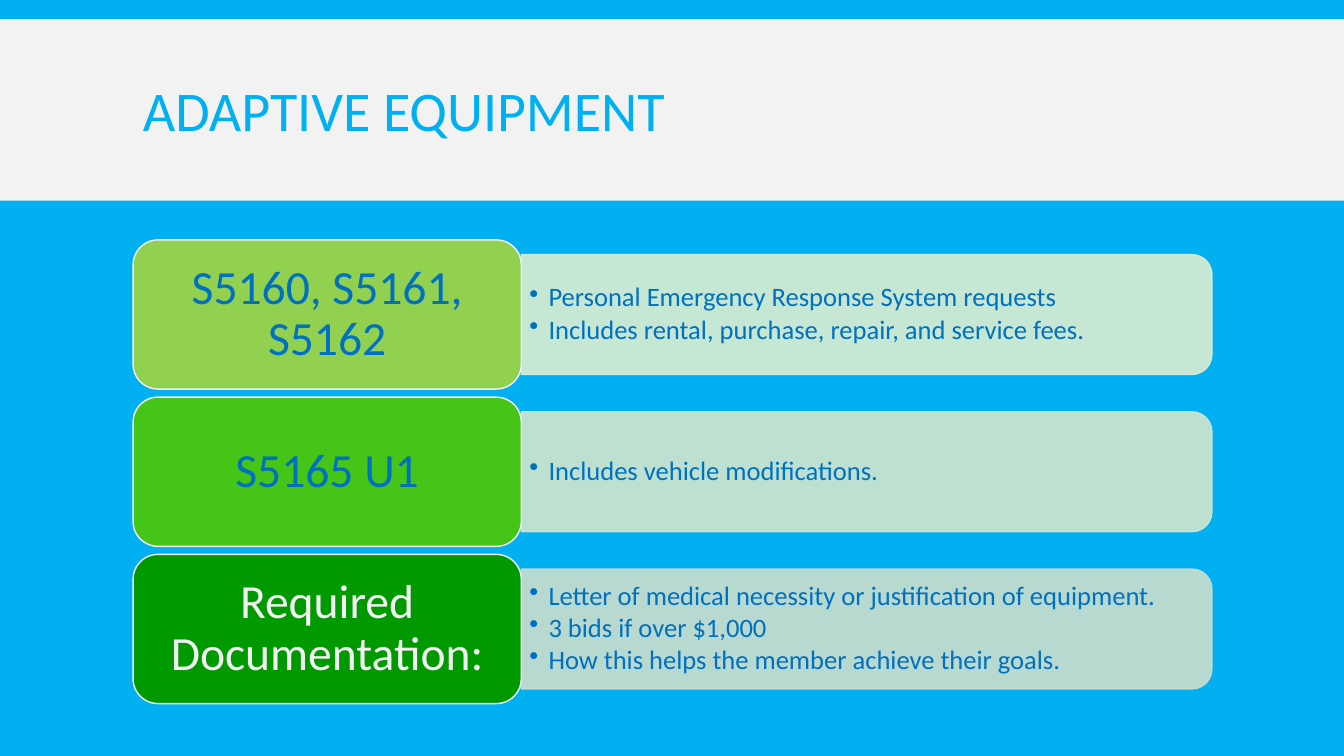
from dataclasses import dataclass

from lxml import etree
from pptx import Presentation
from pptx.dml.color import RGBColor
from pptx.enum.shapes import MSO_SHAPE
from pptx.enum.text import MSO_ANCHOR, PP_ALIGN
from pptx.oxml.ns import qn
from pptx.util import Inches, Pt

RECTANGLE = MSO_SHAPE.RECTANGLE
ROUNDED = MSO_SHAPE.ROUNDED_RECTANGLE
ROUNDED_TOP = MSO_SHAPE.ROUND_2_SAME_RECTANGLE
MIDDLE = MSO_ANCHOR.MIDDLE
LEFT, CENTER = PP_ALIGN.LEFT, PP_ALIGN.CENTER


@dataclass(frozen=True)
class Theme:
    font: str = "Calibri"
    sky: str = "00B0F0"
    pale: str = "F2F2F2"
    blue: str = "0070C0"
    title_size: int = 40
    code_size: int = 34
    detail_size: int = 19
    panel_opacity: int = 90


THEME = Theme()

ROWS = [
    ("S5160, S5161, S5162", "92D050", THEME.blue, "DCEED0",
     ["Personal Emergency Response System requests",
      "Includes rental, purchase, repair, and service fees."]),
    ("S5165 U1", "44C517", THEME.blue, "D2E6CD",
     ["Includes vehicle modifications."]),
    ("Required Documentation:", "009900", THEME.pale, "CCDECC",
     ["Letter of medical necessity or justification of equipment.",
      "3 bids if over $1,000",
      "How this helps the member achieve their goals."]),
]

ROW_LEFT, ROW_TOP, ROW_PITCH = 1.32, 2.38, 1.56
CODE_WIDTH, CODE_HEIGHT = 3.85, 1.48
PANEL_WIDTH, PANEL_HEIGHT = 6.85, 1.19
DETAIL_WIDTH, DETAIL_HEIGHT = 6.79, 1.07


def add_box(slide, kind, left, top, width, height, fill, line=None):
    shape = slide.shapes.add_shape(
        kind, Inches(left), Inches(top), Inches(width), Inches(height))
    shape.shadow.inherit = False
    shape.fill.solid()
    shape.fill.fore_color.rgb = RGBColor.from_string(fill)
    if line:
        shape.line.color.rgb = RGBColor.from_string(line)
        shape.line.width = Pt(1)
    else:
        shape.line.fill.background()
    return shape


def add_text_box(slide, left, top, width, height):
    return slide.shapes.add_textbox(
        Inches(left), Inches(top), Inches(width), Inches(height))


def write_text(shape, lines, size, color, align, spacing, inset_x, inset_y):
    frame = shape.text_frame
    frame.word_wrap = True
    frame.vertical_anchor = MIDDLE
    frame.margin_left = frame.margin_right = Inches(inset_x)
    frame.margin_top = frame.margin_bottom = Inches(inset_y)
    frame.text = "\n".join(lines)
    for paragraph in frame.paragraphs:
        paragraph.alignment = align
        paragraph.line_spacing = spacing
        for run in paragraph.runs:
            run.font.name = THEME.font
            run.font.size = Pt(size)
            run.font.color.rgb = RGBColor.from_string(color)


def add_bullets(shape):
    for paragraph in shape.text_frame.paragraphs:
        paragraph.space_after = Pt(2.5)
        properties = paragraph._p.get_or_add_pPr()
        properties.set("marL", str(Inches(0.19)))
        properties.set("indent", str(Inches(-0.19)))
        etree.SubElement(properties, qn("a:buChar")).set("char", "•")


def set_opacity(shape, percent):
    for color in shape._element.spPr.iter(qn("a:srgbClr")):
        etree.SubElement(color, qn("a:alpha")).set("val", str(percent * 1000))


def add_title(slide, title):
    add_box(slide, RECTANGLE, 0, 0.19, 13.33, 1.8, THEME.pale)
    title_box = add_text_box(slide, 1.32, 0.31, 10.7, 1.65)
    write_text(title_box, [title], THEME.title_size, THEME.sky, LEFT, 0.85, 0.1, 0.05)


def add_panel(slide, left, middle, fill):
    panel = add_box(
        slide, ROUNDED_TOP,
        left + (PANEL_WIDTH - PANEL_HEIGHT) / 2, middle - PANEL_WIDTH / 2,
        PANEL_HEIGHT, PANEL_WIDTH, fill, fill)
    panel.rotation = 90
    set_opacity(panel, THEME.panel_opacity)


def add_row(slide, top, code, code_fill, code_color, panel_fill, details):
    middle = top + CODE_HEIGHT / 2
    panel_left = ROW_LEFT + CODE_WIDTH
    add_panel(slide, panel_left, middle, panel_fill)
    detail_box = add_text_box(
        slide, panel_left, middle - DETAIL_HEIGHT / 2, DETAIL_WIDTH, DETAIL_HEIGHT)
    write_text(detail_box, details, THEME.detail_size, THEME.blue, LEFT, 0.9, 0.08, 0.04)
    add_bullets(detail_box)
    code_box = add_box(
        slide, ROUNDED, ROW_LEFT, top, CODE_WIDTH, CODE_HEIGHT, code_fill, THEME.pale)
    write_text(code_box, [code], THEME.code_size, code_color, CENTER, 0.9, 0.14, 0.07)


def main():
    presentation = Presentation()
    presentation.slide_width = Inches(13.33)
    presentation.slide_height = Inches(7.5)
    slide = presentation.slides.add_slide(presentation.slide_layouts[6])
    slide.background.fill.solid()
    slide.background.fill.fore_color.rgb = RGBColor.from_string(THEME.sky)
    add_title(slide, "ADAPTIVE EQUIPMENT")
    for index, row in enumerate(ROWS):
        add_row(slide, ROW_TOP + index * ROW_PITCH, *row)
    presentation.save("out.pptx")


if __name__ == "__main__":
    main()
